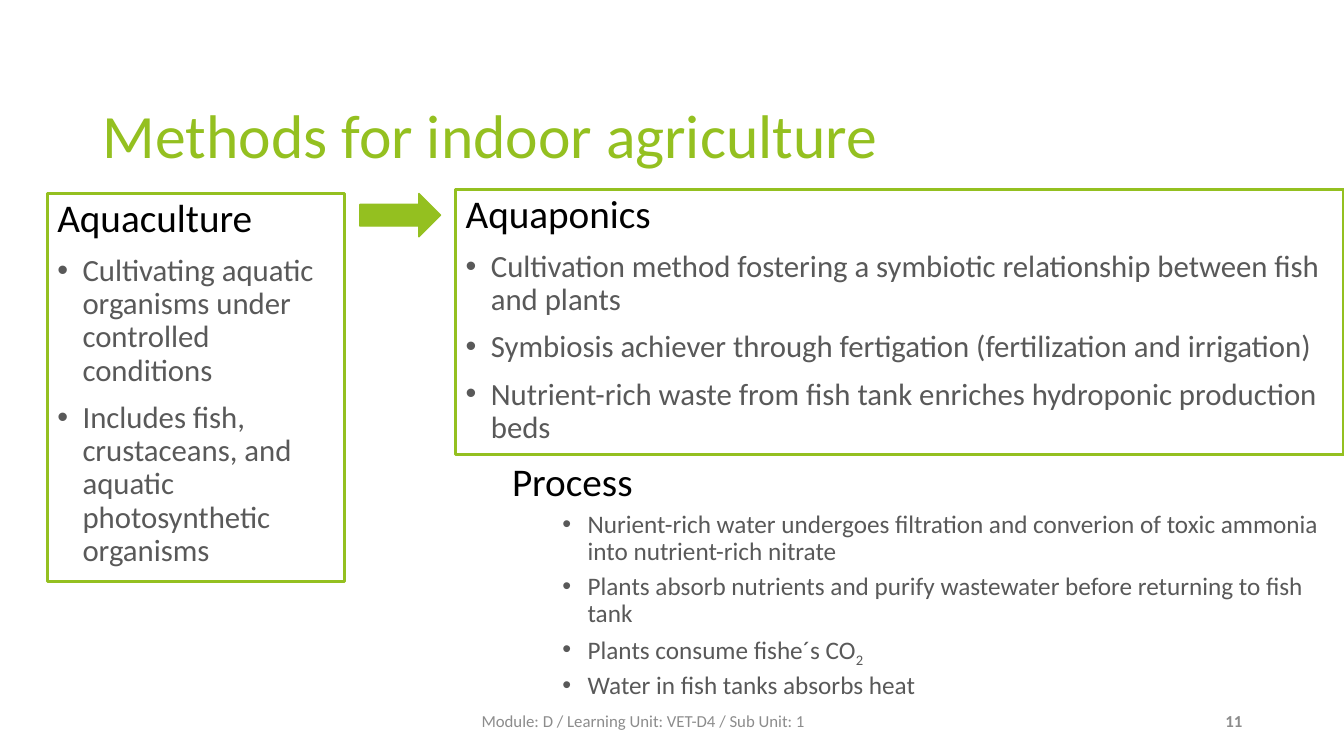
import pptx
import pptx.util
import pptx.dml.color
import pptx.enum.shapes
import pptx.enum.text
import pptx.oxml.ns
import lxml.etree

Inches, Pt = pptx.util.Inches, pptx.util.Pt
RGBColor = pptx.dml.color.RGBColor
ALIGN = pptx.enum.text.PP_ALIGN
ANCHOR = pptx.enum.text.MSO_ANCHOR
SHAPE = pptx.enum.shapes.MSO_SHAPE

GREEN = RGBColor(0x94, 0xC0, 0x20)
BLACK = RGBColor(0x00, 0x00, 0x00)
DARK_GRAY = RGBColor(0x59, 0x59, 0x59)
GRAY = RGBColor(0x8C, 0x8C, 0x8C)


def add_text(tf, text, size, color, bold=False, align=ALIGN.LEFT,
             spacing=1.0, before=0, indent=None, subscript=None):
    """Add a paragraph; indent is the bullet's text margin in inches."""
    p = tf.paragraphs[0] if not tf.text else tf.add_paragraph()
    p.alignment = align
    p.line_spacing = spacing
    p.space_before = Pt(before)
    if indent:
        pPr = p._p.get_or_add_pPr()
        pPr.set("marL", str(Inches(indent)))
        pPr.set("indent", str(Inches(-0.25)))
        for tag, key, value in (("a:buFont", "typeface", "Arial"),
                                ("a:buChar", "char", "•")):
            lxml.etree.SubElement(pPr, pptx.oxml.ns.qn(tag)).set(key, value)
    for part in filter(None, (text, subscript)):
        r = p.add_run()
        r.text = part
        r.font.name = "Calibri"
        r.font.size = Pt(size)
        r.font.bold = bold
        r.font.color.rgb = color
        if part == subscript:
            r._r.get_or_add_rPr().set("baseline", "-25000")


prs = pptx.Presentation()
prs.slide_width, prs.slide_height = Inches(13.33), Inches(7.5)
s = prs.slides.add_slide(prs.slide_layouts[5])

# Title
sp = s.shapes.title
sp.left, sp.top, sp.width, sp.height = map(Inches, (0.92, 0.89, 11.5, 0.96))
tf = sp.text_frame
tf.word_wrap = True
tf.auto_size = pptx.enum.text.MSO_AUTO_SIZE.NONE
tf.vertical_anchor = ANCHOR.MIDDLE
add_text(tf, "Methods for indoor agriculture", 44, GREEN, spacing=0.9)

# Text blocks: place, framed, bullet size, space before, indent, heading, bullets
blocks = [
    ((0.47, 1.92, 2.95, 3.85), True, 22, 10, 0.25, "Aquaculture", [
        ("Cultivating aquatic organisms under controlled conditions", None),
        ("Includes fish, crustaceans, and aquatic photosynthetic organisms", None),
    ]),
    ((4.52, 1.88, 8.81, 2.63), True, 22, 10, 0.25, "Aquaponics", [
        ("Cultivation method fostering a symbiotic relationship between fish "
         "and plants", None),
        ("Symbiosis achiever through fertigation (fertilization and irrigation)",
         None),
        ("Nutrient-rich waste from fish tank enriches hydroponic production beds",
         None),
    ]),
    ((4.98, 4.54, 8.35, 2.63), False, 18, 5, 0.75, "Process", [
        ("Nurient-rich water undergoes filtration and converion of toxic ammonia "
         "into nutrient-rich nitrate", None),
        ("Plants absorb nutrients and purify wastewater before returning to fish "
         "tank", None),
        ("Plants consume fishe´s CO", "2"),
        ("Water in fish tanks absorbs heat", None),
    ]),
]
for place, framed, size, before, indent, heading, bullets in blocks:
    sp = s.shapes.add_textbox(*map(Inches, place))
    if framed:
        sp.line.color.rgb = GREEN
        sp.line.width = Pt(2.25)
    tf = sp.text_frame
    tf.word_wrap = True
    add_text(tf, heading, 28, BLACK, spacing=0.9)
    for text, subscript in bullets:
        add_text(tf, text, size, DARK_GRAY, spacing=0.9, before=before,
                 indent=indent, subscript=subscript)

# Arrow from aquaculture to aquaponics
sp = s.shapes.add_shape(SHAPE.RIGHT_ARROW, *map(Inches, (3.57, 1.92, 0.8, 0.43)))
sp.shadow.inherit = False
sp.fill.solid()
sp.fill.fore_color.rgb = GREEN
sp.line.color.rgb = GREEN
sp.line.width = Pt(1)

# Footer and slide number
for place, text, align, bold in (
        ((0.92, 6.82, 10.92, 0.66),
         "Module: D / Learning Unit: VET-D4 / Sub Unit: 1", ALIGN.CENTER, False),
        ((11.92, 6.95, 0.5, 0.4), "11", ALIGN.RIGHT, True)):
    tf = s.shapes.add_textbox(*map(Inches, place)).text_frame
    tf.word_wrap = True
    tf.vertical_anchor = ANCHOR.MIDDLE
    add_text(tf, text, 12, GRAY, bold=bold, align=align)

prs.save("out.pptx")
